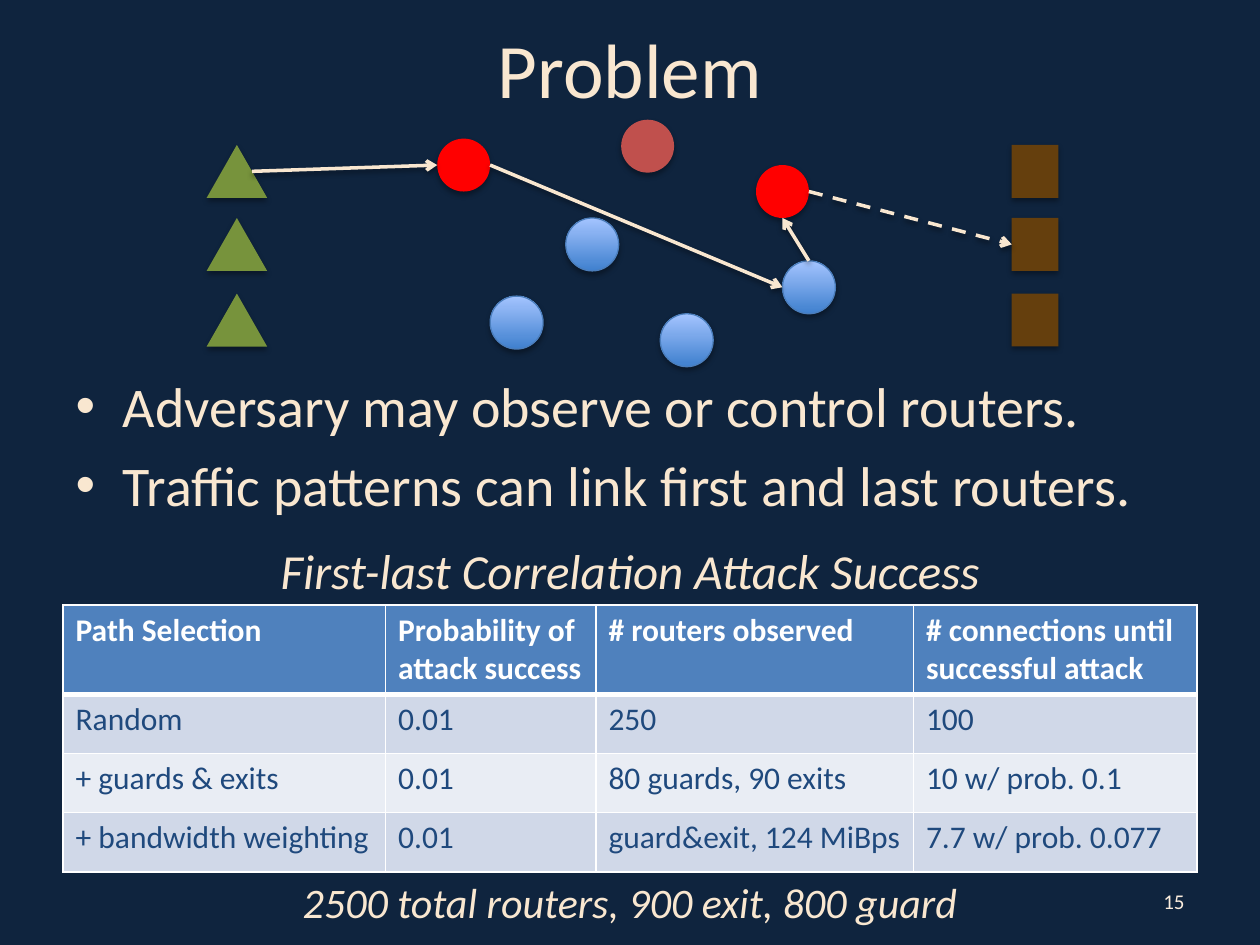
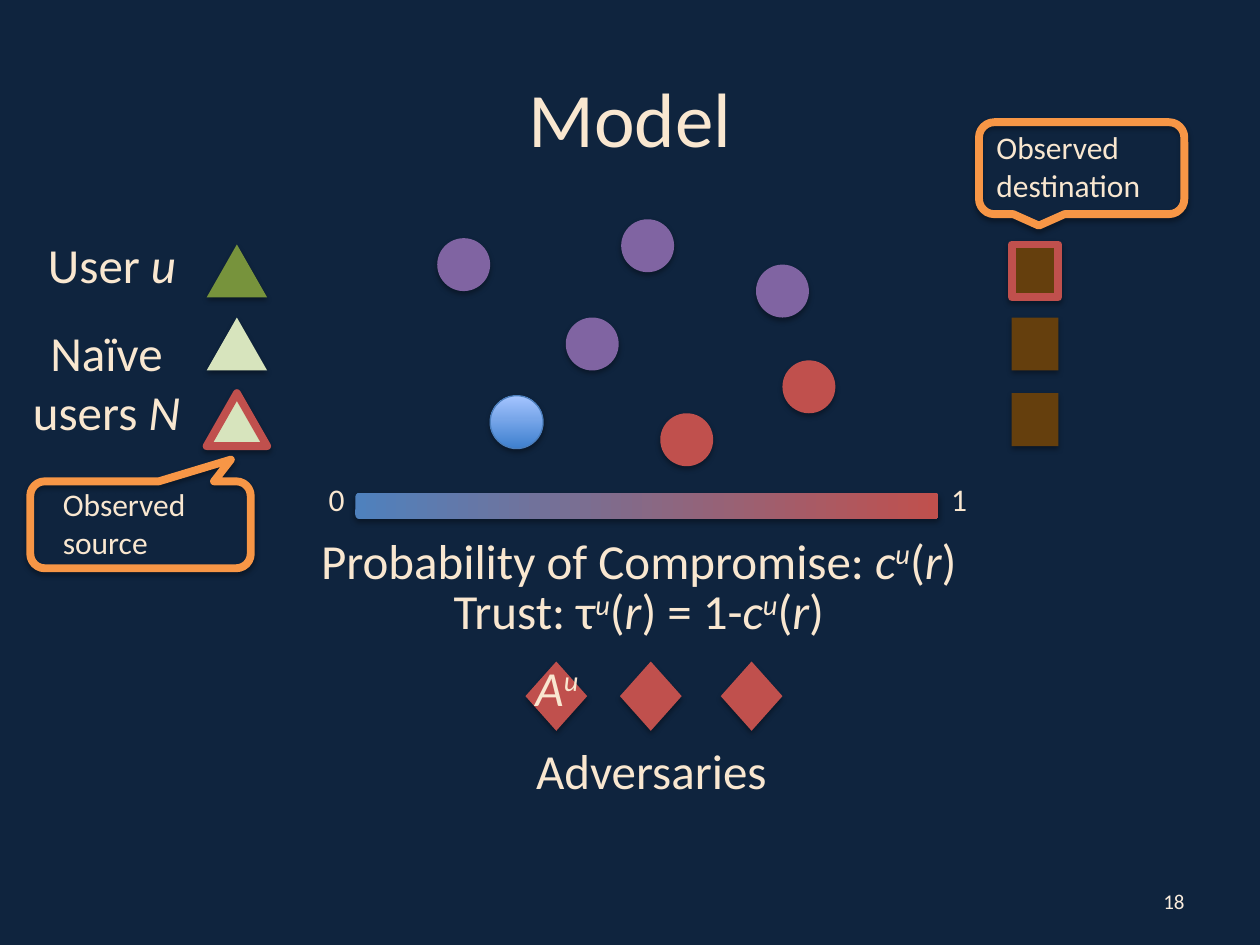
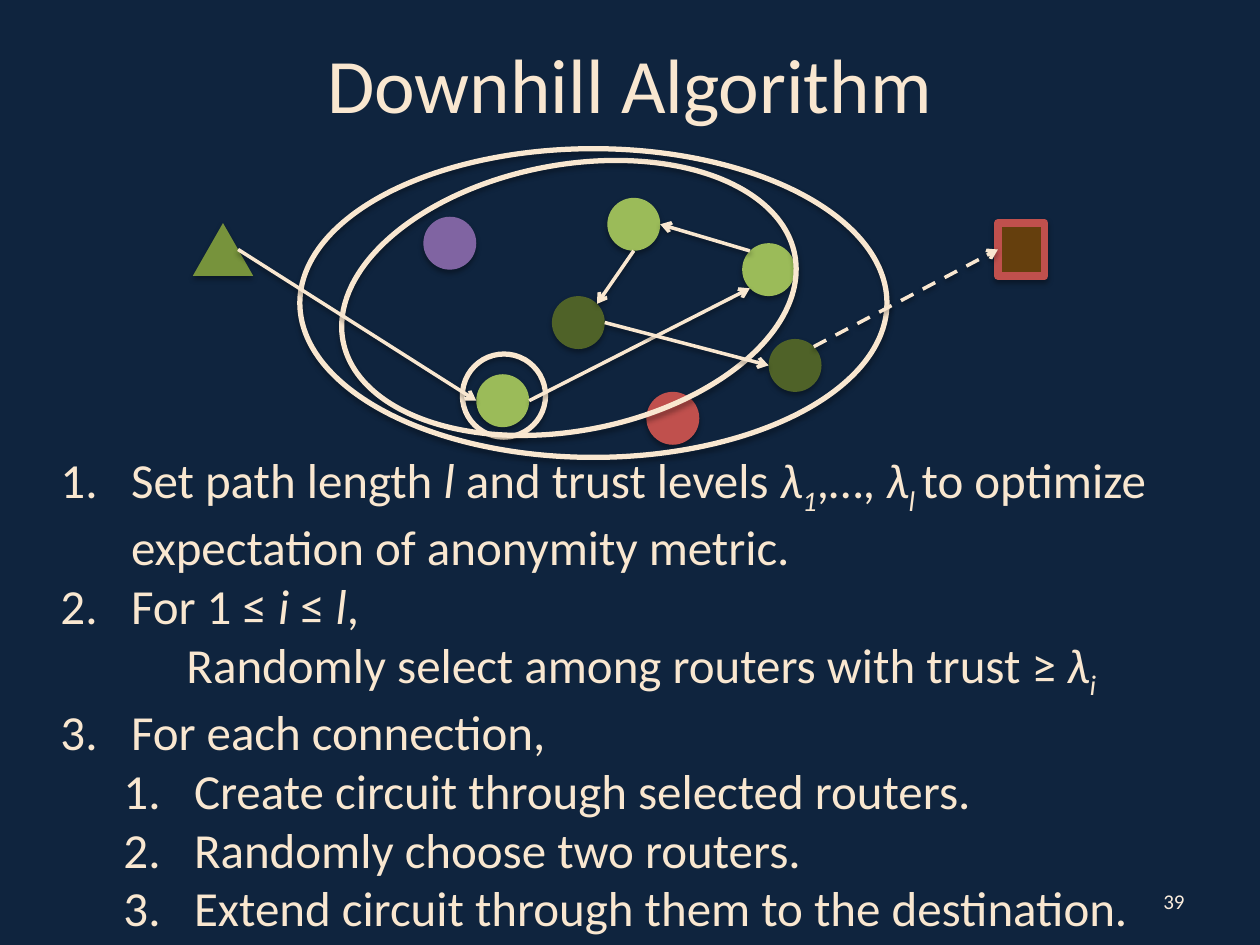
import math
from pptx import Presentation
from pptx.dml.color import RGBColor
from pptx.enum import dml, shapes, text
from pptx.oxml import parse_xml
from pptx.oxml.ns import nsdecls
from pptx.util import Emu, Inches, Pt

HUES = {
    "night": "0F243E", "cream": "F9E7D0", "page": "FBEDDD", "white": "FFFFFF",
    "brown": "653F0D", "olive": "77933C", "pale": "D7E4BD", "red": "FF0000",
    "brick": "C0504D", "purple": "8064A2", "lime": "9BBB59", "moss": "4F6228",
    "orange": "F79646", "blue": "4F81BD", "edge": "4B7EBC", "deep": "3F80CE",
    "sky": "A4C4FF", "navy": "1F497D", "band": "D0D8E8", "light": "E9EDF4",
}
FONT = "Calibri"
KIND = shapes.MSO_SHAPE
MID, LEFT = text.PP_ALIGN.CENTER, text.PP_ALIGN.LEFT
GLOW = ("deep", "sky", 90)

# The network keeps one layout and is shifted as a whole on each slide.
ROUTERS = [(3.47, 1.1), (4.93, 0.95), (6, 1.31), (4.49, 1.73),
           (6.21, 2.07), (3.89, 2.35), (5.24, 2.49)]
ROWS = [1.15, 1.73, 2.33]
USER_X, DEST_X, SIZE = 1.64, 8.03, 0.42


def hue(name):
    return RGBColor.from_string(HUES[name])


def place(item, box):
    item.left, item.top, item.width, item.height = map(Inches, box)


def write(para, runs, size, color="cream", bold=False):
    """Add runs given as (text, marks): i italic, ^ raised, _ lowered."""
    for words, marks in runs:
        if words == "\n":
            para.add_line_break()
            continue
        run = para.add_run()
        run.text = words
        font = run.font
        font.name, font.size, font.bold = FONT, Pt(size), bold
        font.italic = "i" in marks
        font.color.rgb = hue(color)
        for mark, base in (("^", "30000"), ("_", "-25000")):
            if mark in marks:
                run._r.get_or_add_rPr().set("baseline", base)


def label(slide, box, runs, size, align=MID, color="cream"):
    item = slide.shapes.add_textbox(*map(Inches, box))
    frame = item.text_frame
    frame.word_wrap = True
    para = frame.paragraphs[0]
    para.alignment = align
    write(para, runs, size, color)
    return frame


def shade(item, alpha, drop):
    item._element.spPr.append(parse_xml(
        f'<a:effectLst {nsdecls("a")}><a:outerShdw blurRad="{Pt(3.1)}" dist="{Pt(drop)}" '
        f'dir="5400000" rotWithShape="0"><a:srgbClr val="000000"><a:alpha val="{alpha}000"/>'
        '</a:srgbClr></a:outerShdw></a:effectLst>'))


def draw(slide, kind, box, fill=None, edge=None, width=4.5):
    """Fill is a colour name, a (start, end, angle) gradient or None."""
    item = slide.shapes.add_shape(kind, *map(Inches, box))
    if fill is None:
        item.fill.background()
    elif isinstance(fill, tuple):
        item.fill.gradient()
        item.fill.gradient_angle = fill[2]
        for stop, name in zip(item.fill.gradient_stops, fill):
            stop.color.rgb = hue(name)
    else:
        item.fill.solid()
        item.fill.fore_color.rgb = hue(fill)
    if edge:
        item.line.color.rgb = hue(edge)
        item.line.width = Pt(width)
    else:
        item.line.fill.background()
    shade(item, 35, 1.8)
    return item


def routers(slide, fills, dx, dy):
    dots = []
    for (x, y), fill in zip(ROUTERS, fills):
        edge = "edge" if fill == GLOW else None
        dots.append(draw(slide, KIND.OVAL, (x + dx, y + dy, SIZE, SIZE), fill, edge, 0.75))
    return dots


def ends(slide, users, goals, dx, dy):
    """Draw users and destinations, each a (fill, edge) pair, row by row."""
    sides = []
    for kind, x, wide, looks in ((KIND.ISOSCELES_TRIANGLE, USER_X, 0.48, users),
                                 (KIND.RECTANGLE, DEST_X, 0.37, goals)):
        sides.append([draw(slide, kind, (x + dx, y + dy, wide, SIZE), *look)
                      for y, look in zip(ROWS, looks)])
    return sides


def rim(dot, turn):
    """Point on a circle, in degrees clockwise from its right."""
    angle, half = math.radians(turn), dot.width / 2
    return (Emu(round(dot.left + half * (1 + math.cos(angle)))),
            Emu(round(dot.top + half * (1 + math.sin(angle)))))


def slope(user):
    """Middle of a triangle's right edge."""
    return Emu(user.left + user.width * 3 // 4), Emu(user.top + user.height // 2)


def link(slide, start, end, goal=None):
    """Arrow to a point, or a dashed one joined to the goal's left side."""
    line = slide.shapes.add_connector(shapes.MSO_CONNECTOR.STRAIGHT, *start, *end)
    line.line.color.rgb = hue("cream")
    line.line.width = Pt(2)
    if goal is not None:
        line.end_connect(goal, 1)
        line.line.dash_style = dml.MSO_LINE.DASH
    line.line._get_or_add_ln().append(
        parse_xml(f'<a:tailEnd {nsdecls("a")} type="arrow"/>'))
    shade(line, 38, 1.6)


def route(slide, user, hops, last, goal):
    """Link the user to the hops, pairs of (dot, turn), then to the goal."""
    link(slide, slope(user), rim(*hops[0]))
    for start, end in zip(hops[1::2], hops[2::2]):
        link(slide, rim(*start), rim(*end))
    link(slide, rim(*last), (goal.left, goal.top), goal)


def border(cell, top, low):
    props = cell._tc.get_or_add_tcPr()
    for spot, (side, width) in enumerate((("L", 1), ("R", 1), ("T", top), ("B", low))):
        props.insert(spot, parse_xml(
            f'<a:ln{side} {nsdecls("a")} w="{Pt(width)}"><a:solidFill>'
            f'<a:srgbClr val="{HUES["white"]}"/></a:solidFill></a:ln{side}>'))


def grid(slide, box, cols, heights, rows):
    table = slide.shapes.add_table(len(rows), len(cols), *map(Inches, box)).table
    for col, wide in zip(table.columns, cols):
        col.width = Inches(wide)
    for i, row in enumerate(rows):
        table.rows[i].height = Inches(heights[i])
        head = i == 0
        for j, words in enumerate(row):
            cell = table.cell(i, j)
            cell.fill.solid()
            cell.fill.fore_color.rgb = hue("blue" if head else "band" if i % 2 else "light")
            border(cell, 3 if i == 1 else 1, 3 if head else 1)
            write(cell.text_frame.paragraphs[0], [(words, "")], 18,
                  "white" if head else "navy", head)


def start(deck, layout, title, box, number):
    slide = deck.slides.add_slide(deck.slide_layouts[layout])
    place(slide.shapes.title, box)
    write(slide.shapes.title.text_frame.paragraphs[0], [(title, "")], 44)
    frame = label(slide, (7.17, 6.95, 2.33, 0.4), [(number, "")], 12,
                  text.PP_ALIGN.RIGHT, "page")
    frame.vertical_anchor = text.MSO_ANCHOR.MIDDLE
    return slide


def listing(slide, box, items, size, count=False):
    """Fill the body with (level, runs) items, numbered if count is set."""
    body = slide.placeholders[1]
    place(body, box)
    frame = body.text_frame
    frame.auto_size = text.MSO_AUTO_SIZE.NONE
    for i, (level, runs) in enumerate(items):
        para = frame.paragraphs[0] if i == 0 else frame.add_paragraph()
        para.level = level
        if count:
            para.space_before = Pt(0)
            props = para._p.get_or_add_pPr()
            props.set("marL", str(Inches(0.56 + level / 2)))
            props.set("indent", str(Inches(-0.56)))
            props.append(parse_xml(f'<a:buFont {nsdecls("a")} typeface="+mj-lt"/>'))
            props.append(parse_xml(f'<a:buAutoNum {nsdecls("a")} type="arabicPeriod"/>'))
        write(para, runs, size)


def problem(deck):
    slide = start(deck, 1, "Problem", (0.5, 0.09, 9, 0.89), "15")
    listing(slide, (0.5, 2.9, 9, 1.78), [
        (0, [("Adversary may observe or control routers.", "")]),
        (0, [("Traffic patterns can link first and last routers.", "")])], 32)
    users, goals = ends(slide, [("olive",)] * 3, [("brown",)] * 3, 0, 0)
    dots = routers(slide, ["red", "brick", "red", GLOW, GLOW, GLOW, GLOW], 0, 0)
    first, last, relay = dots[0], dots[2], dots[4]
    route(slide, users[0], [(first, 180), (first, 0), (relay, 180),
                            (relay, 270), (last, 90)], (last, 0), goals[1])
    grid(slide, (0.5, 4.8, 9, 2.12), [2.56, 1.67, 2.52, 2.25], [0.71, 0.47, 0.47, 0.47], [
        ["Path Selection", "Probability of attack success", "# routers observed",
         "# connections until successful attack"],
        ["Random", "0.01", "250", "100"],
        ["+ guards & exits", "0.01", "80 guards, 90 exits", "10 w/ prob. 0.1"],
        ["+ bandwidth weighting", "0.01", "guard&exit, 124 MiBps", "7.7 w/ prob. 0.077"]])
    label(slide, (0.5, 6.91, 9, 0.5), [("2500 total routers, 900 exit, 800 guard", "i")], 24)
    label(slide, (0.5, 4.24, 9, 0.57), [("First-last Correlation Attack Success", "i")], 28)


def model(deck):
    slide = start(deck, 5, "Model", (0.5, 0.3, 9, 1.25), "18")
    ends(slide, [("olive",), ("pale",), ("pale", "brick")],
         [("brown", "brick"), ("brown",), ("brown",)], 0, 0.79)
    routers(slide, ["purple"] * 4 + ["brick", GLOW, "brick"], 0, 0.79)
    for x in (4.17, 4.92, 5.72):
        draw(slide, KIND.DIAMOND, (x, 5.25, 0.49, 0.55), "brick")
    draw(slide, KIND.ROUNDED_RECTANGLE, (2.82, 3.91, 4.63, 0.21), ("blue", "brick", 0))
    draw(slide, KIND.ROUNDED_RECTANGULAR_CALLOUT, (7.77, 0.97, 1.63, 0.73), None, "orange")
    source = draw(slide, KIND.ROUNDED_RECTANGULAR_CALLOUT, (0.24, 3.82, 1.75, 0.69),
                  None, "orange")
    source.adjustments[0], source.adjustments[1] = 0.41, -0.75

    chance = [("c", "i"), ("u", "i^"), ("(", ""), ("r", "i"), (")", "")]
    for box, runs in (
        ((0.15, 1.81, 1.39, 0.57), [(" User", ""), (" u", "i")]),
        ((0.15, 2.51, 1.39, 1.04), [("Naïve users ", ""), ("N", "i")]),
        ((4.04, 5.17, 0.76, 0.57), [("A", "i"), ("u", "i^")]),
        ((4.04, 5.83, 2.26, 0.57), [("Adversaries", "")]),
        ((2.33, 4.16, 5.48, 0.57), [("Probability of Compromise: ", "")] + chance),
        ((2.33, 4.56, 5.48, 0.57), [("Trust: τ", "")] + chance[1:4]
         + [(") = 1-", "")] + chance),
    ):
        label(slide, box, runs, 28)
    for box, words, align in (
        ((2.51, 3.76, 0.31, 0.42), "0", MID),
        ((7.45, 3.76, 0.31, 0.42), "1", MID),
        ((7.81, 0.97, 1.39, 0.71), "Observed destination", LEFT),
        ((0.4, 3.8, 1.39, 0.71), "Observed source", LEFT),
    ):
        label(slide, box, [(words, "")], 18, align)


def downhill(deck):
    slide = start(deck, 1, "Downhill Algorithm", (0.5, 0.13, 9, 1.05), "39")
    listing(slide, (0.38, 3.52, 9.5, 3.87), [
        (0, [("Set path length ", ""), ("l", "i"), (" and trust levels ", ""), ("λ", "i"),
             ("1", "i_"), (",…, ", ""), ("λ", "i"), ("l ", "i_"),
             ("to optimize expectation of anonymity metric.", "")]),
        (0, [("For 1 ≤ ", ""), ("i", "i"), (" ≤ ", ""), ("l", "i"), (",", ""), ("\n", ""),
             ("\tRandomly select among routers with trust ≥ ", ""), ("λ", "i"), ("i", "i_")]),
        (0, [("For each connection,", "")]),
        (1, [("Create circuit through selected routers.", "")]),
        (1, [("Randomly choose two routers.", "")]),
        (1, [("Extend circuit through them to the destination.", "")])], 28, True)
    users, goals = ends(slide, [("olive",)], [("brown", "brick")], -0.11, 0.62)
    dots = routers(slide, ["purple", "lime", "lime", "moss", "moss", "lime", "brick"],
                   -0.11, 0.62)
    for box, turn in (((3.67, 2.81, 0.66, 0.66), 0), ((2.69, 1.31, 3.65, 2.11), 349.2),
                      ((2.38, 1.18, 4.66, 2.45), 0)):
        draw(slide, KIND.OVAL, box, None, "cream", 3).rotation = turn
    top, right, core, exit_dot, entry = dots[1:6]
    route(slide, users[0], [(entry, 180), (entry, 0), (right, 135), (right, 225), (top, 0),
                            (top, 90), (core, 315), (core, 0), (exit_dot, 180)],
          (exit_dot, 315), goals[0])


def main():
    deck = Presentation()
    deck.slide_width, deck.slide_height = Inches(10), Inches(7.5)
    back = deck.slide_master.background.fill
    back.solid()
    back.fore_color.rgb = hue("night")
    problem(deck)
    model(deck)
    downhill(deck)
    deck.save("out.pptx")


if __name__ == "__main__":
    main()
